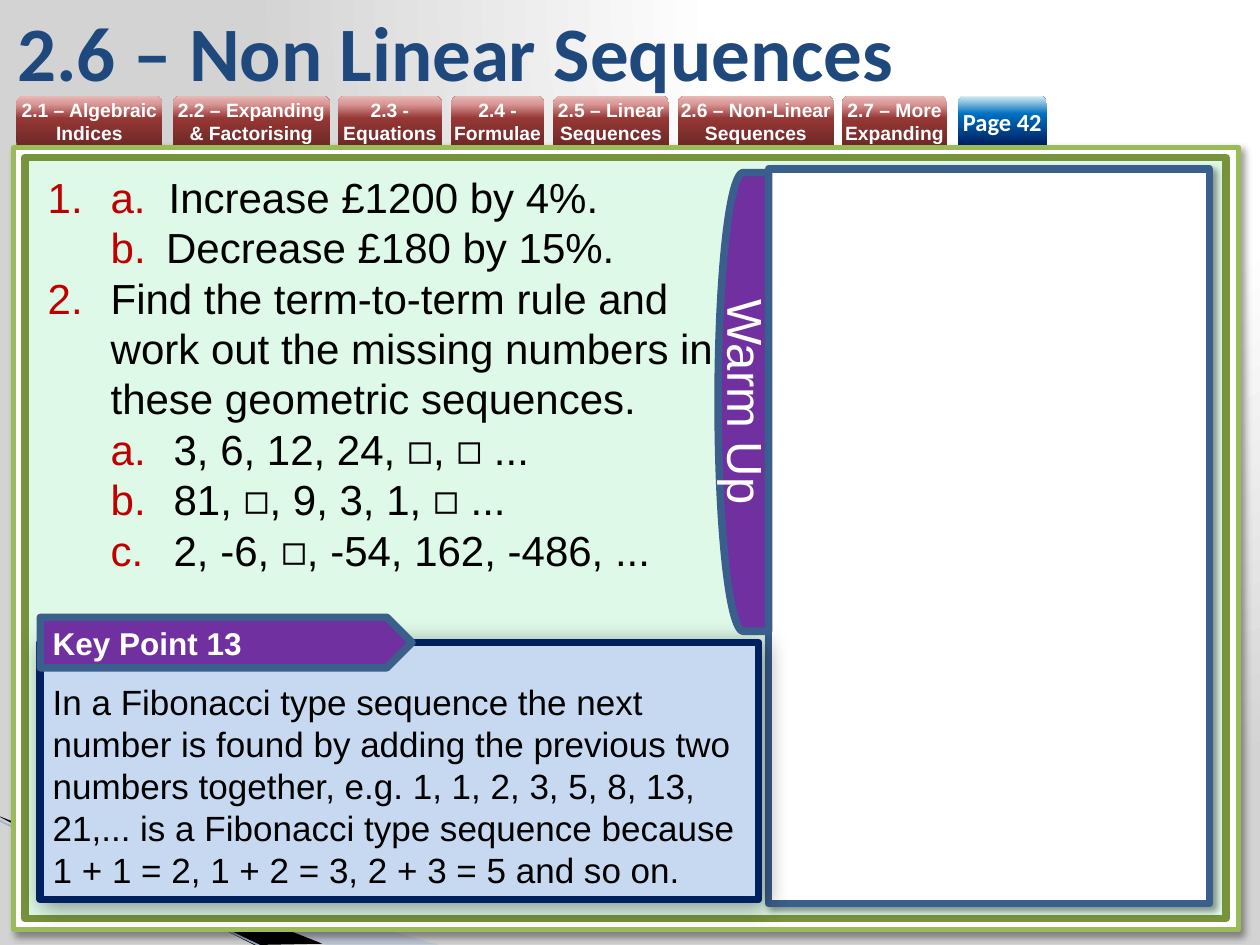
"""Builds the "2.6 – Non Linear Sequences" warm-up slide."""
from lxml import etree
from pptx import Presentation
from pptx.dml.color import RGBColor
from pptx.enum.shapes import MSO_CONNECTOR, MSO_SHAPE
from pptx.enum.text import MSO_ANCHOR, PP_ALIGN
from pptx.oxml import parse_xml
from pptx.oxml.ns import qn
from pptx.util import Inches, Pt

RECT, TAB = MSO_SHAPE.RECTANGLE, MSO_SHAPE.ROUND_2_SAME_RECTANGLE
ARROW, DELAY = MSO_SHAPE.PENTAGON, MSO_SHAPE.FLOWCHART_DELAY
STRAIGHT = MSO_CONNECTOR.STRAIGHT
TOP, MIDDLE = MSO_ANCHOR.TOP, MSO_ANCHOR.MIDDLE
LEFT, CENTER = PP_ALIGN.LEFT, PP_ALIGN.CENTER
NS = "http://schemas.openxmlformats.org/drawingml/2006/main"

C = {"white": "FFFFFF", "black": "000000", "title": "1F497D", "red": "C00000",
     "mint": "DFF9E8", "lime": "9BBB59", "olive": "77933C", "steel": "3A5F8C",
     "purple": "7030A0", "navy": "002060", "pale": "C6D9F1",
     "wedge": "A7B9DB", "streak": "9EB3D6"}
UPWARD = '<a:lin ang="16200000" scaled="0"/>'
CORNER = '<a:path path="circle"><a:fillToRect l="65000" t="0" r="0" b="98000"/></a:path>'
BACKDROP = [(0, "FFFFFF"), (40, "FFFFFF"), (100, "D3D3D3")]
MAROON = [(0, "6F2927"), (54, "953735"), (83, "D99694"), (100, "E6B9B8")]
BLUE = [(0, "002060"), (63, "0070C0"), (100, "DBEEF4")]

WEDGES = [
    ([(-0.01, 6.5), (3.49, 7.5), (2.59, 7.5), (-0.01, 6.49)], "wedge", 40),
    ([(0, 6.48), (2.56, 7.49), (2.02, 7.5), (0.01, 6.49)], "black", 100),
]
PANELS = [
    ((0.11, 1.17, 9.72, 6.21), "white", "lime", 3, 4),
    ((0.2, 1.25, 9.53, 6.04), "mint", "olive", 4.33, 0),
    ((6.1, 1.34, 3.5, 5.83), "white", "steel", 4.33, 4),
]
TABS = [
    (0.13, 1.16, "2.1 – Algebraic Indices"),
    (1.37, 1.25, "2.2 – Expanding & Factorising"),
    (2.68, 0.83, "2.3 - Equations"),
    (3.58, 0.74, "2.4 - Formulae"),
    (4.39, 0.92, "2.5 – Linear Sequences"),
    (5.38, 1.24, "2.6 – Non-Linear Sequences"),
    (6.68, 0.84, "2.7 – More Expanding"),
]
PAGE = (7.6, 0.71, "Page 42")
TAB_TOP, TAB_HEIGHT = 0.76, 0.39
NUMBER, LETTER = "arabicPeriod", "alphaLcPeriod"
QUESTIONS = [
    (0, 0.5, 0.5, NUMBER, 1, [("a.", "red"), ("\tIncrease £1200 by 4%.", "black")]),
    (1, 0.94, 0.44, LETTER, 2, [("Decrease £180 by 15%.", "black")]),
    (0, 0.5, 0.5, NUMBER, 1, [("Find the term-to-term rule and work out the missing "
                               "numbers in these geometric sequences.", "black")]),
] + [(1, 1, 0.5, LETTER, 1, [(t, "black")]) for t in (
    "3, 6, 12, 24, ◻, ◻ ...", "81, ◻, 9, 3, 1, ◻ ...", "2, -6, ◻, -54, 162, -486, ...")]
KEY_POINT = ("In a Fibonacci type sequence the next number is found by adding the previous "
             "two numbers together, e.g. 1, 1, 2, 3, 5, 8, 13, 21,... is a Fibonacci type "
             "sequence because 1 + 1 = 2, 1 + 2 = 3, 2 + 3 = 5 and so on.")


def rgb(name):
    return RGBColor.from_string(C[name])


def gradient(stops, direction):
    gs = "".join(f'<a:gs pos="{pos * 1000}"><a:srgbClr val="{color}"/></a:gs>'
                 for pos, color in stops)
    return parse_xml(f'<a:gradFill xmlns:a="{NS}" rotWithShape="1">'
                     f'<a:gsLst>{gs}</a:gsLst>{direction}</a:gradFill>')


def add_shadow(sp, blur, dist=3):
    effects = sp._element.spPr.find(qn("a:effectLst"))
    effects.append(parse_xml(
        f'<a:outerShdw xmlns:a="{NS}" blurRad="{Pt(blur)}" dist="{Pt(dist)}" dir="2700000" '
        'algn="tl" rotWithShape="0"><a:srgbClr val="000000"><a:alpha val="40000"/>'
        '</a:srgbClr></a:outerShdw>'))


def style(sp, fill, line=None, width=0, blur=0):
    sp.shadow.inherit = False
    sp.fill.solid()
    sp.fill.fore_color.rgb = rgb(fill)
    if line:
        sp.line.color.rgb = rgb(line)
        sp.line.width = Pt(width)
    else:
        sp.line.fill.background()
    if blur:
        add_shadow(sp, blur)


def add_box(s, kind, box, *look):
    sp = s.shapes.add_shape(kind, *map(Inches, box))
    style(sp, *look)
    return sp


def format_run(r, size, color, bold=False, font="Arial"):
    for key, value in {"size": Pt(size), "bold": bold, "name": font}.items():
        setattr(r.font, key, value)
    r.font.color.rgb = rgb(color)


def write(sp, text, size, color, bold=False, font="Arial", align=LEFT,
          anchor=MIDDLE, insets=(0.1, 0.05, 0.1, 0.05)):
    tf = sp.text_frame
    tf.word_wrap, tf.vertical_anchor = True, anchor
    for side, inset in zip(("left", "top", "right", "bottom"), insets):
        setattr(tf, f"margin_{side}", Inches(inset))
    p = tf.paragraphs[0]
    p.alignment = align
    r = p.add_run()
    r.text = text
    format_run(r, size, color, bold, font)


def add_tab(s, tab, stops, size, font="Arial"):
    left, width, text = tab
    sp = add_box(s, TAB, (left, TAB_TOP, width, TAB_HEIGHT), "white")
    spPr = sp._element.spPr
    spPr.replace(spPr.find(qn("a:solidFill")), gradient(stops, UPWARD))
    write(sp, text, size, "white", True, font, CENTER, insets=(0, 0, 0, 0))


def add_questions(s):
    tf = s.shapes.add_textbox(*map(Inches, (0.28, 1.31, 5.75, 3.33))).text_frame
    tf.word_wrap = True
    for i, (level, margin, hanging, scheme, start, runs) in enumerate(QUESTIONS):
        p = tf.add_paragraph() if i else tf.paragraphs[0]
        p.level = level
        pPr = p._p.get_or_add_pPr()
        pPr.set("marL", str(Inches(margin)))
        pPr.set("indent", str(-Inches(hanging)))
        color = etree.SubElement(pPr, qn("a:buClr"))
        etree.SubElement(color, qn("a:srgbClr"), val=C["red"])
        bullet = etree.SubElement(pPr, qn("a:buAutoNum"), type=scheme)
        if start > 1:
            bullet.set("startAt", str(start))
        stops = etree.SubElement(pPr, qn("a:tabLst"))
        for pos in (0.96, 3.06, 6.88):
            etree.SubElement(stops, qn("a:tab"), pos=str(Inches(pos)), algn="l")
        for text, name in runs:
            r = p.add_run()
            r.text = text
            format_run(r, 24, name)


def main():
    prs = Presentation()
    prs.slide_width, prs.slide_height = Inches(10), Inches(7.5)
    s = prs.slides.add_slide(prs.slide_layouts[6])
    s.background.fill.solid()
    bgPr = s._element.find(".//" + qn("p:bgPr"))
    bgPr.replace(bgPr[0], gradient(BACKDROP, CORNER))

    for points, fill, alpha in WEDGES:
        corners = [(Inches(x), Inches(y)) for x, y in points]
        builder = s.shapes.build_freeform(*corners[0])
        builder.add_line_segments(corners[1:])
        sp = builder.convert_to_shape()
        style(sp, fill)
        color = sp._element.spPr.find(qn("a:solidFill"))[0]
        etree.SubElement(color, qn("a:alpha"), val=str(alpha * 1000))
    streak = s.shapes.add_connector(STRAIGHT, *map(Inches, (-0.01, 6.51, 2.09, 7.52)))
    streak.line.color.rgb = rgb("streak")
    streak.line.width = Pt(0.95)
    etree.SubElement(streak._element.spPr, qn("a:effectLst"))

    for box, *look in PANELS:
        add_box(s, RECT, box, *look)
    for tab in TABS:
        add_tab(s, tab, MAROON, 11)
    add_tab(s, PAGE, BLUE, 14, "Calibri")
    add_questions(s)
    title = s.shapes.add_textbox(*map(Inches, (0.04, 0.05, 8.27, 0.71)))
    write(title, "2.6 – Non Linear Sequences", 44, "title", True, "Calibri")

    note = add_box(s, RECT, (0.32, 5.1, 5.7, 2.04), "pale", "navy", 4.33, 13)
    write(note, KEY_POINT, 20, "black", anchor=TOP, insets=(0.1, 0.3, 0.1, 0.05))
    label = add_box(s, ARROW, (0.32, 4.9, 2.95, 0.4), "purple", "steel", 4.33)
    write(label, "Key Point 13", 18, "white", True)
    side = add_box(s, DELAY, (5.7, 1.37, 0.4, 3.64), "purple", "steel", 4.33)
    side._element.spPr.find(qn("a:xfrm")).set("flipH", "1")
    write(side, "Warm Up", 28, "white", align=CENTER)
    side.text_frame._txBody.bodyPr.set("vert", "vert")
    prs.save("out.pptx")


if __name__ == "__main__":
    main()
